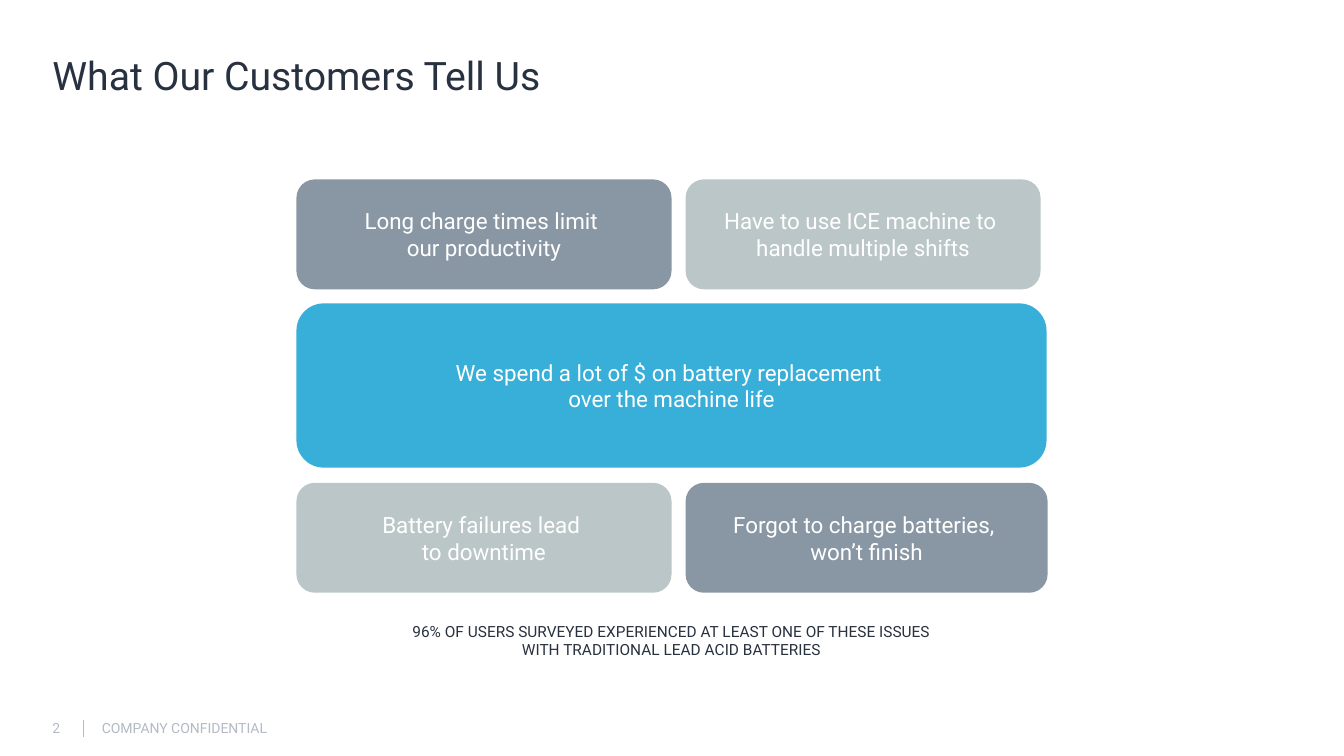
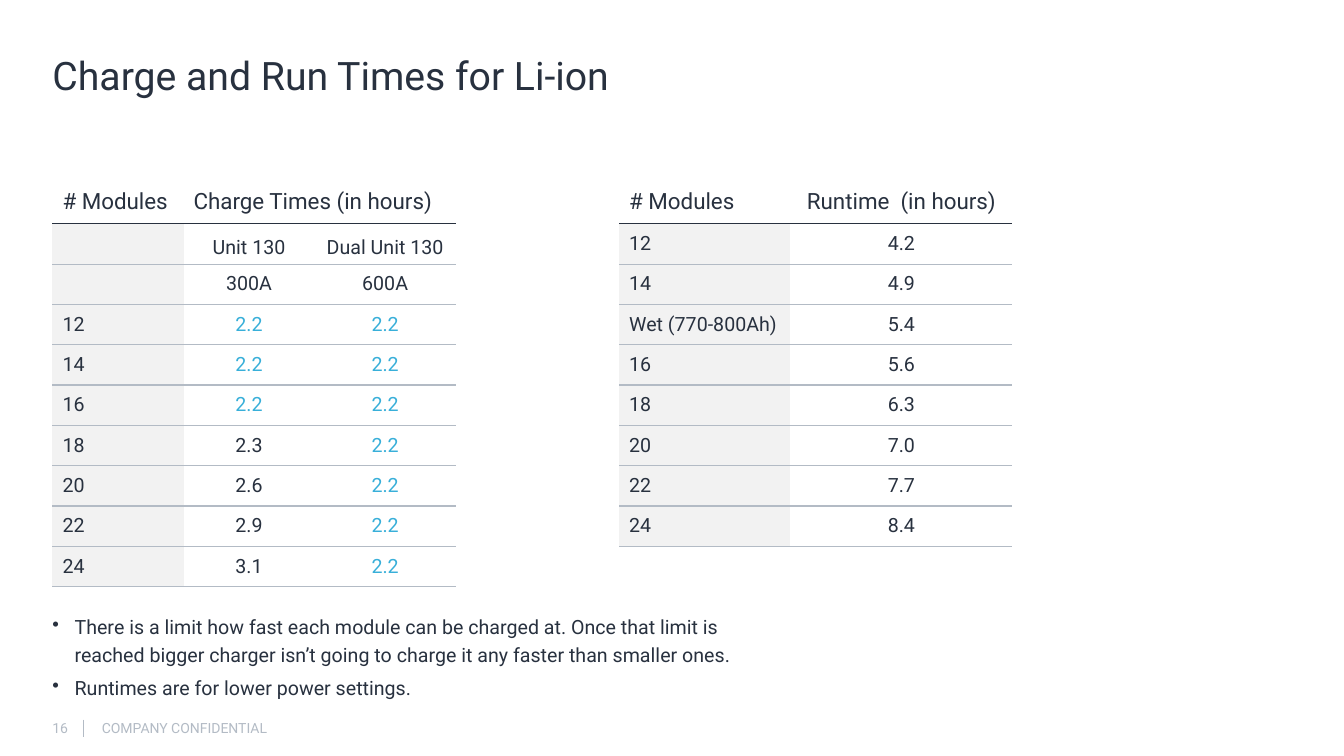
from lxml.etree import SubElement
from pptx import Presentation
from pptx.dml.color import RGBColor
from pptx.enum.shapes import MSO_CONNECTOR, MSO_SHAPE
from pptx.enum.text import MSO_ANCHOR, PP_ALIGN
from pptx.oxml import parse_xml
from pptx.oxml.ns import nsdecls, qn
from pptx.util import Inches, Pt

FONT = "Roboto"
COLORS = {
    "ink": "28313F",
    "white": "FFFFFF",
    "blue": "38AFD9",
    "slate": "8997A4",
    "mist": "BBC6C8",
    "rule": "B3BBC5",
    "shade": "F2F2F2",
}
LEFT = 0.52
ROW = 0.4


def color(name):
    return RGBColor.from_string(COLORS[name])


def add_run(para, text, size, tone="ink"):
    run = para.add_run()
    run.text = text
    run.font.name = FONT
    run.font.size = Pt(size)
    run.font.color.rgb = color(tone)


def set_frame(frame, anchor=MSO_ANCHOR.TOP):
    """Make the frame wrap, with no margins."""
    frame.word_wrap = True
    frame.vertical_anchor = anchor
    frame.margin_left = frame.margin_right = 0
    frame.margin_top = frame.margin_bottom = 0
    return frame


def add_box(slide, box, anchor=MSO_ANCHOR.TOP):
    shape = slide.shapes.add_textbox(*map(Inches, box))
    return set_frame(shape.text_frame, anchor)


def add_text(slide, box, text, size, tone="ink", anchor=MSO_ANCHOR.TOP):
    para = add_box(slide, box, anchor).paragraphs[0]
    add_run(para, text, size, tone)
    return para


def add_foot(slide, number, left=LEFT, top=7.14, height=0.17):
    small = {"size": 10, "tone": "rule", "anchor": MSO_ANCHOR.MIDDLE}
    add_text(slide, (left, top, 0.3, height), str(number), **small)
    add_text(slide, (left + 0.49, top, 2.28, height), "COMPANY CONFIDENTIAL", **small)
    x = Inches(left + 0.31)
    line = slide.shapes.add_connector(
        MSO_CONNECTOR.STRAIGHT, x, Inches(top), x, Inches(top + height))
    line.line.color.rgb = color("rule")
    line.line.width = Pt(0.25)
    SubElement(line._element.spPr, qn("a:effectLst"))


def add_slide(deck, title, number):
    """Add a blank slide with the shared title and footer."""
    slide = deck.slides.add_slide(deck.slide_layouts[6])
    para = add_text(slide, (LEFT, 0.54, 12.28, 0.42), title, 28)
    para.line_spacing = Pt(31)
    para.space_after = Pt(4)
    add_foot(slide, number)
    return slide


def add_tile(slide, box, fill, lines):
    tile = slide.shapes.add_shape(MSO_SHAPE.ROUNDED_RECTANGLE, *map(Inches, box))
    tile.shadow.inherit = False
    tile.fill.solid()
    tile.fill.fore_color.rgb = color(fill)
    tile.line.fill.background()
    para = set_frame(tile.text_frame, MSO_ANCHOR.MIDDLE).paragraphs[0]
    para.alignment = PP_ALIGN.CENTER
    for i, line in enumerate(lines):
        if i:
            para.add_line_break()
        add_run(para, line, 16, "white")


def add_tiles(slide, left, top):
    """Place two small tiles, a wide one and two more small ones."""
    low, high, gap = 1.09, 1.63, 0.14
    right = left + 3.86
    mid = top + low + gap
    base = mid + high + gap + 0.01
    tiles = [
        ((left, top, 3.72, low), "slate",
         ("Long charge times limit ", "our productivity")),
        ((right, top, 3.52, low), "mist",
         ("Have to use ICE machine to ", "handle multiple shifts")),
        ((left, mid, 7.44, high), "blue",
         ("We spend a lot of $ on battery replacement ", "over the machine life")),
        ((left, base, 3.72, low), "mist",
         ("Battery failures lead ", "to downtime")),
        ((right, base, 3.59, low), "slate",
         ("Forgot to charge batteries, ", "won’t finish")),
    ]
    for tile in tiles:
        add_tile(slide, *tile)


def set_edge(cell, top, bottom):
    """Rule a cell above and below; None leaves a side bare."""
    edges = (("lnL", None), ("lnR", None), ("lnT", top), ("lnB", bottom))
    props = cell._tc.get_or_add_tcPr()
    for i, (tag, tone) in enumerate(edges):
        paint = "<a:noFill/>"
        if tone:
            paint = f'<a:solidFill><a:srgbClr val="{COLORS[tone]}"/></a:solidFill>'
        props.insert(i, parse_xml(
            f'<a:{tag} {nsdecls("a")} w="12700">{paint}</a:{tag}>'))


def fill_cell(cell, text, row, col, center, pad):
    head = row == 0
    cell.margin_left = cell.margin_right = Inches(0.1)
    cell.margin_top, cell.margin_bottom = map(Inches, pad)
    cell.vertical_anchor = MSO_ANCHOR.TOP if head else MSO_ANCHOR.MIDDLE
    if col == 0 and not head:
        cell.fill.solid()
        cell.fill.fore_color.rgb = color("shade")
    else:
        cell.fill.background()
    above = (None, "ink")[row] if row < 2 else "rule"
    set_edge(cell, above, "ink" if head else "rule")
    para = cell.text_frame.paragraphs[0]
    if center:
        para.alignment = PP_ALIGN.CENTER
    if text:
        tone = "blue" if col and text == "2.2" else "ink"
        add_run(para, text, 16 if head else 14, tone)
    else:
        para.font.size = Pt(14)


def add_grid(slide, left, top, widths, rows, pads):
    """Add a ruled table; pads gives top and bottom margins by row."""
    table = slide.shapes.add_table(
        len(rows), len(widths), Inches(left), Inches(top),
        Inches(sum(widths)), Inches(ROW * len(rows))).table
    table.first_row = table.horz_banding = False
    for col, width in zip(table.columns, widths):
        col.width = Inches(width)
    for r, row in enumerate(rows):
        table.rows[r].height = Inches(ROW)
        wide = row[-1] is None
        for c, text in enumerate(row):
            center = c > 0 and not wide
            pad = pads.get(r, (0, 0)) if text else (0, 0)
            fill_cell(table.cell(r, c), text, r, c, center, pad)
        if wide:
            table.cell(r, 1).merge(table.cell(r, len(row) - 1))


def add_list(slide, box, items):
    frame = add_box(slide, box, MSO_ANCHOR.MIDDLE)
    for i, item in enumerate(items):
        para = frame.add_paragraph() if i else frame.paragraphs[0]
        props = para._p.get_or_add_pPr()
        props.set("marL", str(Inches(0.22)))
        props.set("indent", str(Inches(-0.22)))
        SubElement(props, qn("a:buChar")).set("char", "•")
        para.line_spacing = 1.2
        if i:
            para.space_before = Pt(3.4)
        add_run(para, item, 14)


def build_voice(deck):
    slide = add_slide(deck, "What Our Customers Tell Us", 2)
    add_tiles(slide, 2.94, 1.78)
    note = add_text(
        slide, (3.93, 6.17, 5.46, 0.37),
        "96% OF USERS SURVEYED EXPERIENCED AT LEAST ONE OF THESE ISSUES "
        "WITH TRADITIONAL LEAD ACID BATTERIES", 11)
    note.alignment = PP_ALIGN.CENTER


def build_times(deck):
    slide = add_slide(deck, "Charge and Run Times for Li-ion", 16)
    charge = [
        ("# Modules", "Charge Times (in hours)", None),
        ("", "Unit 130", "Dual Unit 130"),
        ("", "300A", "600A"),
        ("12", "2.2", "2.2"),
        ("14", "2.2", "2.2"),
        ("16", "2.2", "2.2"),
        ("18", "2.3", "2.2"),
        ("20", "2.6", "2.2"),
        ("22", "2.9", "2.2"),
        ("24", "3.1", "2.2"),
    ]
    run = [
        ("# Modules", "Runtime  (in hours)"),
        ("12", "4.2"),
        ("14", "4.9"),
        ("Wet (770-800Ah)", "5.4"),
        ("16", "5.6"),
        ("18", "6.3"),
        ("20", "7.0"),
        ("22", "7.7"),
        ("24", "8.4"),
    ]
    head = {0: (0.05, 0.05)}
    add_grid(slide, LEFT, 1.82, (1.3, 1.3, 1.4), charge, {**head, 1: (0.12, 0.04)})
    add_grid(slide, 6.14, 1.82, (1.7, 2.2), run, head)
    add_list(slide, (LEFT, 6.14, 6.96, 0.71), (
        "There is a limit how fast each module can be charged at. Once that limit is "
        "reached bigger charger isn’t going to charge it any faster than smaller ones.",
        "Runtimes are for lower power settings."))


def main():
    deck = Presentation()
    deck.slide_width = Inches(13.33)
    deck.slide_height = Inches(7.5)
    build_voice(deck)
    build_times(deck)
    deck.save("out.pptx")


if __name__ == "__main__":
    main()
